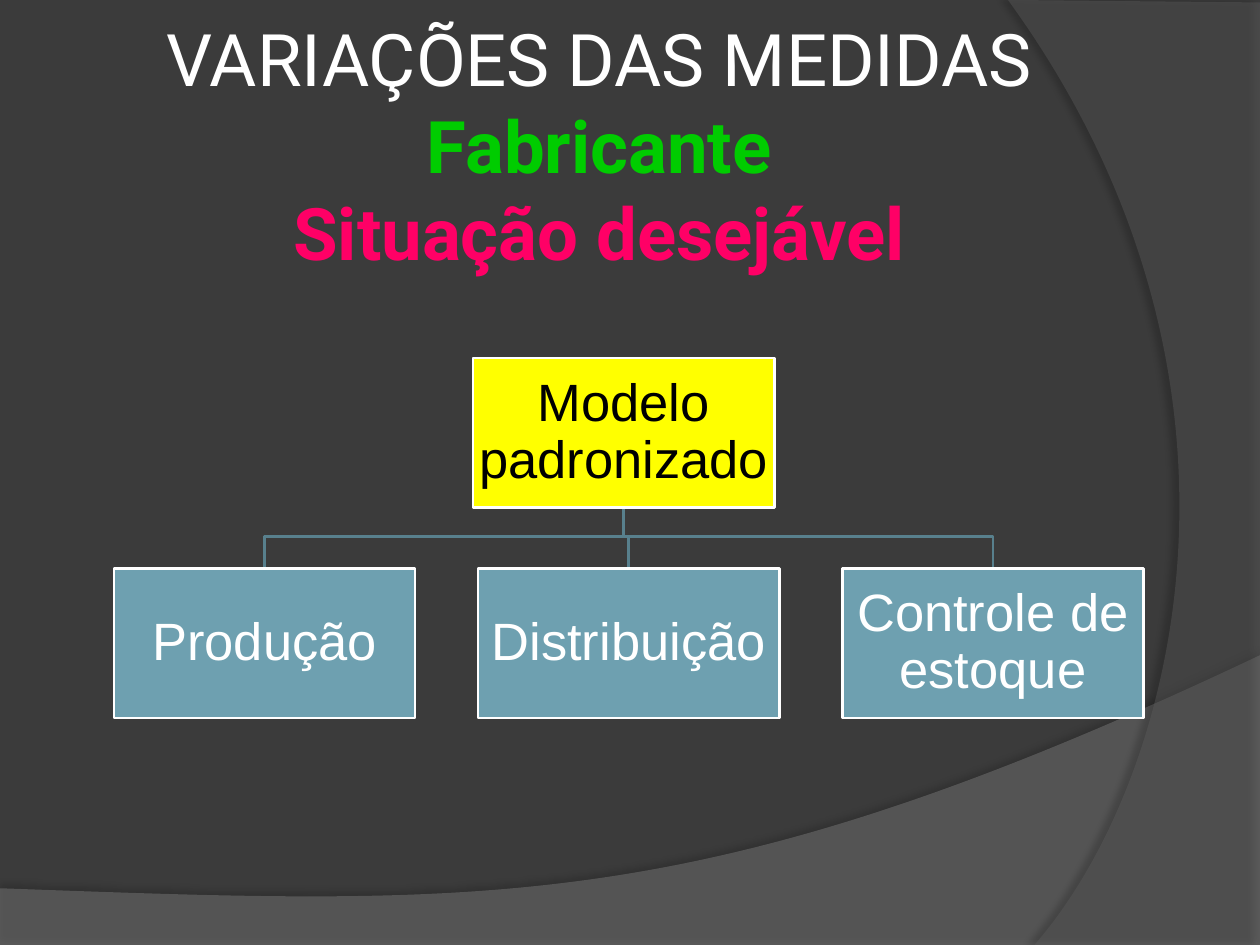
import pptx
import pptx.util
import pptx.dml.color
import pptx.enum.shapes
import pptx.enum.text
import lxml.etree

theme = {
    "back": "3B3B3B", "wave": "7F7F7F", "side": "5E5E5E",
    "white": "FFFFFF", "green": "00CC00", "pink": "FF0066",
    "yellow": "FFFF00", "black": "000000", "blue": "6EA0B0", "link": "58808D",
    "title_font": "Roboto", "box_font": "Arial",
    "title_size": 41.4, "box_size": 30, "line": 1.5,
}
inch = pptx.util.Inches
tag = pptx.oxml.ns.qn


def color(name):
    return pptx.dml.color.RGBColor.from_string(theme[name])


def outline(points, closed):
    places = [(inch(x), inch(y)) for x, y in points]
    builder = page.shapes.build_freeform(*places[0])
    builder.add_line_segments(places[1:], close=closed)
    shape = builder.convert_to_shape()
    shape.shadow.inherit = False
    return shape


deck = pptx.Presentation()
width, height = 10, 7.5
deck.slide_width, deck.slide_height = inch(width), inch(height)
page = deck.slides.add_slide(deck.slide_layouts[6])
page.background.fill.solid()
page.background.fill.fore_color.rgb = color("back")

swooshes = [
    ("wave", 45, [(0, 7.05), (0, 7.51), (width, 7.51), (width, 5.2)],
     [(5.59, 7.29), (3.91, 7.19), (0, 7.05)], 35, 3.5, 270),
    ("side", 40, [(width, 0.02), (width, height), (8.21, height)],
     [(9.35, 6.19), (10.18, 3), (8, 0)], 45, 4, 180),
]
for name, opacity, corners, curve, shade, distance, angle in swooshes:
    swoosh = outline(corners + curve[-1:], True)
    swoosh.fill.solid()
    swoosh.fill.fore_color.rgb = color(name)
    swoosh.line.fill.background()
    properties = swoosh.fill._xPr
    bend = properties.findall(".//" + tag("a:lnTo"))[-1]
    bend.tag = tag("a:cubicBezTo")
    bend.remove(bend[0])
    for x, y in curve:
        lxml.etree.SubElement(bend, tag("a:pt"), x=str(inch(x) - swoosh.left),
                              y=str(inch(y) - swoosh.top))
    tint = properties.find(".//" + tag("a:srgbClr"))
    lxml.etree.SubElement(tint, tag("a:alpha"), val=str(opacity * 1000))
    effects = properties.find(tag("a:effectLst"))
    shadow = lxml.etree.SubElement(
        effects, tag("a:outerShdw"), blurRad=str(pptx.util.Pt(4)),
        dist=str(pptx.util.Pt(distance)), dir=str(angle * 60000), algn="ctr", rotWithShape="0")
    tone = lxml.etree.SubElement(shadow, tag("a:srgbClr"), val=theme["black"])
    lxml.etree.SubElement(tone, tag("a:alpha"), val=str(shade * 1000))

title = page.shapes.add_textbox(inch(0.67), inch(0.52), inch(8.17), inch(1.25))
frame = title.text_frame
frame.word_wrap = True
frame.vertical_anchor = pptx.enum.text.MSO_ANCHOR.MIDDLE
frame.margin_left = frame.margin_right = frame.margin_top = frame.margin_bottom = inch(0.05)
para = frame.paragraphs[0]
para.alignment = pptx.enum.text.PP_ALIGN.CENTER
para.font.name = theme["title_font"]
para.font.size = pptx.util.Pt(theme["title_size"])
title_lines = [
    ("VARIAÇÕES DAS MEDIDAS", "white", False),
    ("Fabricante", "green", True),
    ("Situação desejável", "pink", True),
]
for index, (words, name, bold) in enumerate(title_lines):
    if index:
        para.add_line_break()
    span = para.add_run()
    span.text = words
    span.font.bold = bold
    span.font.color.rgb = color(name)

box_width, box_height = 2.39, 1.19
first_center, column = 2.1, 2.89
root_center, root_top, child_top = 4.95, 2.84, 4.51
root_bottom, bus = root_top + box_height, 4.26
children = ["Produção", "Distribuição", "Controle de estoque"]
boxes = [("Modelo padronizado", root_center, root_top, "yellow", "black")]
for index, words in enumerate(children):
    center = first_center + index * column
    boxes.append((words, center, child_top, "blue", "white"))
    link = outline([(root_center, root_bottom), (root_center, bus),
                    (center, bus), (center, child_top)], False)
    link.fill.background()
    link.line.color.rgb = color("link")
    link.line.width = pptx.util.Pt(theme["line"])

for words, center, top, fill, ink in boxes:
    box = page.shapes.add_shape(pptx.enum.shapes.MSO_SHAPE.RECTANGLE,
                                inch(center - box_width / 2), inch(top),
                                inch(box_width), inch(box_height))
    box.shadow.inherit = False
    box.fill.solid()
    box.fill.fore_color.rgb = color(fill)
    box.line.color.rgb = color("white")
    box.line.width = pptx.util.Pt(theme["line"])
    frame = box.text_frame
    frame.word_wrap = True
    frame.vertical_anchor = pptx.enum.text.MSO_ANCHOR.MIDDLE
    frame.margin_left = frame.margin_right = frame.margin_top = frame.margin_bottom = inch(0.02)
    para = frame.paragraphs[0]
    para.text = words
    para.alignment = pptx.enum.text.PP_ALIGN.CENTER
    para.line_spacing = 0.9
    para.font.name = theme["box_font"]
    para.font.size = pptx.util.Pt(theme["box_size"])
    para.font.color.rgb = color(ink)

deck.save("out.pptx")
